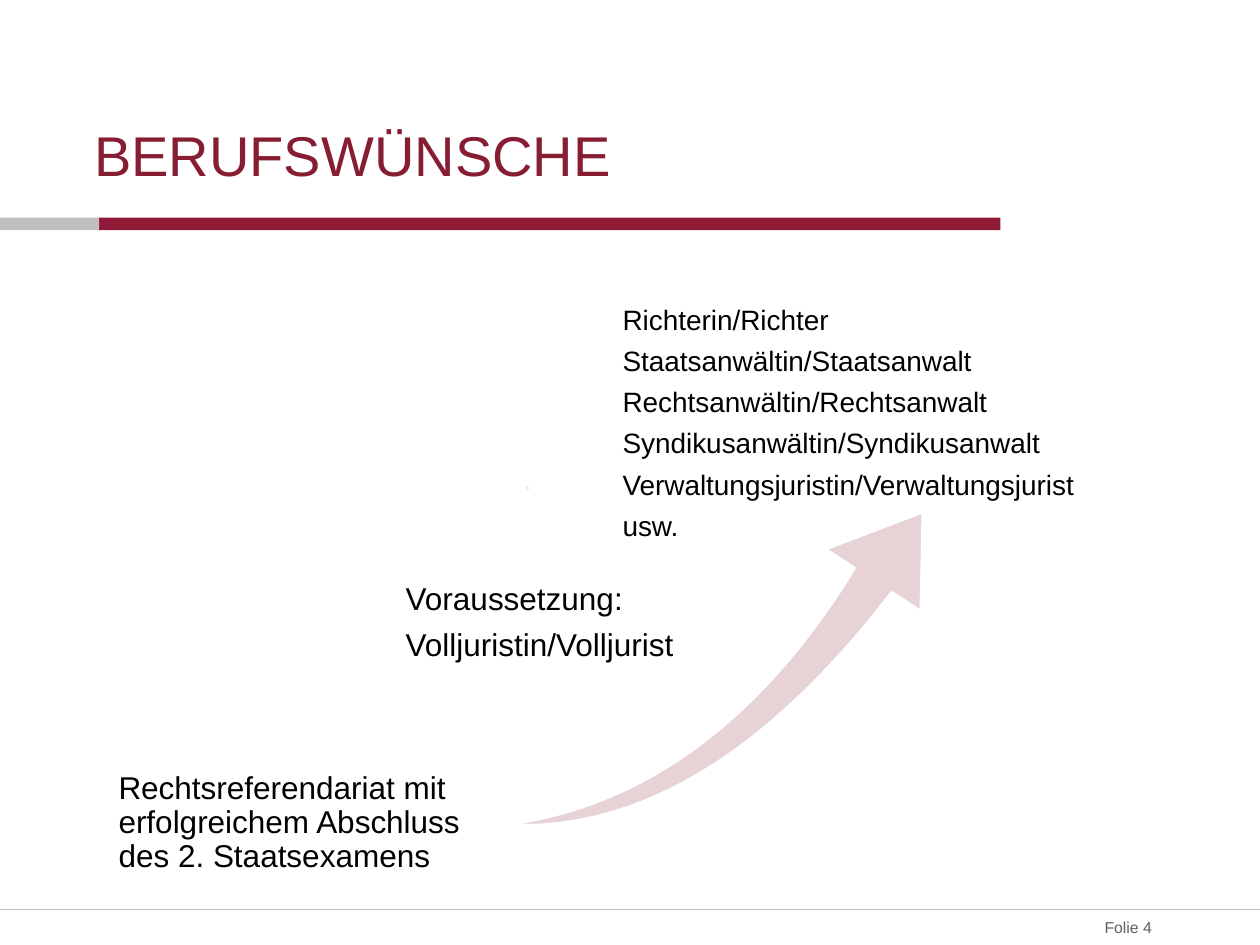
"""Builds the slide "Berufswünsche": the path from legal training to the legal professions."""
from lxml import etree
from pptx import Presentation
from pptx.dml.color import RGBColor
from pptx.enum.shapes import MSO_CONNECTOR, MSO_SHAPE
from pptx.enum.text import MSO_ANCHOR, MSO_AUTO_SIZE, PP_ALIGN
from pptx.oxml.ns import qn
from pptx.util import Cm, Pt

TITLE = {"lines": ["BERUFSWÜNSCHE"], "at": (1.9, 1.22, 16.23, 2.57), "style": "title",
         "frame": {"vertical_anchor": MSO_ANCHOR.BOTTOM}}

TEXTS = [
    {"lines": ["Folie 4"], "at": (20.17, 18.34, 3.23, 0.71), "style": "footer",
     "frame": {"vertical_anchor": MSO_ANCHOR.MIDDLE, "margin_right": Cm(0.18)}},
    {"lines": ["Richterin/Richter", "Staatsanwältin/Staatsanwalt", "Rechtsanwältin/Rechtsanwalt",
               "Syndikusanwältin/Syndikusanwalt", "Verwaltungsjuristin/Verwaltungsjurist", "usw."],
     "at": (12.5, 5.33, 10.9, 6.17), "style": "jobs",
     "frame": {"margin_left": Cm(0.05), "margin_right": Cm(0.05), "margin_top": Cm(0.84)}},
    {"lines": ["Voraussetzung:", "Volljuristin/Volljurist"],
     "at": (8.1, 11.53, 6.25, 2.06), "style": "step",
     "frame": {"vertical_anchor": MSO_ANCHOR.MIDDLE, "margin_left": Cm(0.08)}},
    {"lines": ["Rechtsreferendariat mit erfolgreichem Abschluss des 2. Staatsexamens"],
     "at": (2.31, 15.49, 7.7, 2.34), "style": "step",
     "frame": {"margin_left": Cm(0.08), "margin_right": Cm(0.08), "margin_top": Cm(0.08)}},
]

SHAPES = [
    {"kind": MSO_SHAPE.RECTANGLE, "at": (1.98, 4.39, 18.19, 0.25), "fill": "bar"},
    {"kind": MSO_SHAPE.RECTANGLE, "at": (0, 4.39, 2, 0.25), "fill": "grey"},
    {"kind": MSO_SHAPE.SWOOSH_ARROW, "at": (10.01, 10.85, 9.47, 5.64), "fill": "arrow",
     "outline": "white", "rotation": 296.7, "flip": "flipV", "adjust": (0.16, 0.31)},
    {"kind": MSO_SHAPE.OVAL, "at": (10.57, 9.75, 0.13, 0.18), "fill": "dot",
     "outline": "white", "flip": "flipH"},
]

THEME = {
    "font": "Arial",
    "colors": {"bar": "8F1936", "grey": "C0C0C0", "arrow": "E7D2D6", "dot": "F1E5E8",
               "white": "FFFFFF", "title": "871D33", "footer": "606060", "body": "000000"},
    "styles": {
        "title": {"size": 32, "color": "title", "paragraph": {"alignment": PP_ALIGN.LEFT}},
        "footer": {"size": 9, "color": "footer", "paragraph": {"alignment": PP_ALIGN.RIGHT}},
        "jobs": {"size": 16, "color": "body",
                 "paragraph": {"line_spacing": 0.9, "space_after": Pt(6.3)}},
        "step": {"size": 18, "color": "body",
                 "paragraph": {"line_spacing": 0.9, "space_after": Pt(7.1)}},
    },
}

FRAME = {"word_wrap": True, "auto_size": MSO_AUTO_SIZE.NONE, "vertical_anchor": MSO_ANCHOR.TOP,
         "margin_left": 0, "margin_top": 0, "margin_right": 0, "margin_bottom": 0}


def apply(target, values):
    for name, value in values.items():
        setattr(target, name, value)


def color(name):
    return RGBColor.from_string(THEME["colors"][name])


def place(lengths):
    return [Cm(length) for length in lengths]


def write(holder, content):
    style = THEME["styles"][content["style"]]
    frame = holder.text_frame
    apply(frame, FRAME | content["frame"])
    frame.text = "\n".join(content["lines"])
    for paragraph in frame.paragraphs:
        apply(paragraph, style["paragraph"])
        apply(paragraph.font, {"name": THEME["font"], "size": Pt(style["size"])})
        paragraph.font.color.rgb = color(style["color"])


def draw(slide, content):
    shape = slide.shapes.add_shape(content["kind"], *place(content["at"]))
    shape.shadow.inherit = False
    shape.fill.solid()
    shape.fill.fore_color.rgb = color(content["fill"])
    if "outline" in content:
        shape.line.color.rgb = color(content["outline"])
        shape.line.width = Pt(2)
    else:
        shape.line.fill.background()
    shape.rotation = content.get("rotation", 0)
    if "flip" in content:
        shape.element.spPr.find(qn("a:xfrm")).set(content["flip"], "1")
    for index, value in enumerate(content.get("adjust", ())):
        shape.adjustments[index] = value


def draw_footer_line(slide):
    footer_line = slide.shapes.add_connector(MSO_CONNECTOR.STRAIGHT, *place((0, 18.34, 25.4, 18.34)))
    footer_line.line.color.rgb = color("grey")
    footer_line.line.width = Pt(0.75)
    etree.SubElement(footer_line.element.spPr, qn("a:effectLst"))


def main():
    deck = Presentation()
    apply(deck, {"slide_width": Cm(25.4), "slide_height": Cm(19.05)})
    slide = deck.slides.add_slide(deck.slide_layouts[5])
    heading = slide.shapes.title
    apply(heading, dict(zip(("left", "top", "width", "height"), place(TITLE["at"]))))
    write(heading, TITLE)
    for content in SHAPES:
        draw(slide, content)
    draw_footer_line(slide)
    for content in TEXTS:
        write(slide.shapes.add_textbox(*place(content["at"])), content)
    deck.save("out.pptx")


if __name__ == "__main__":
    main()
